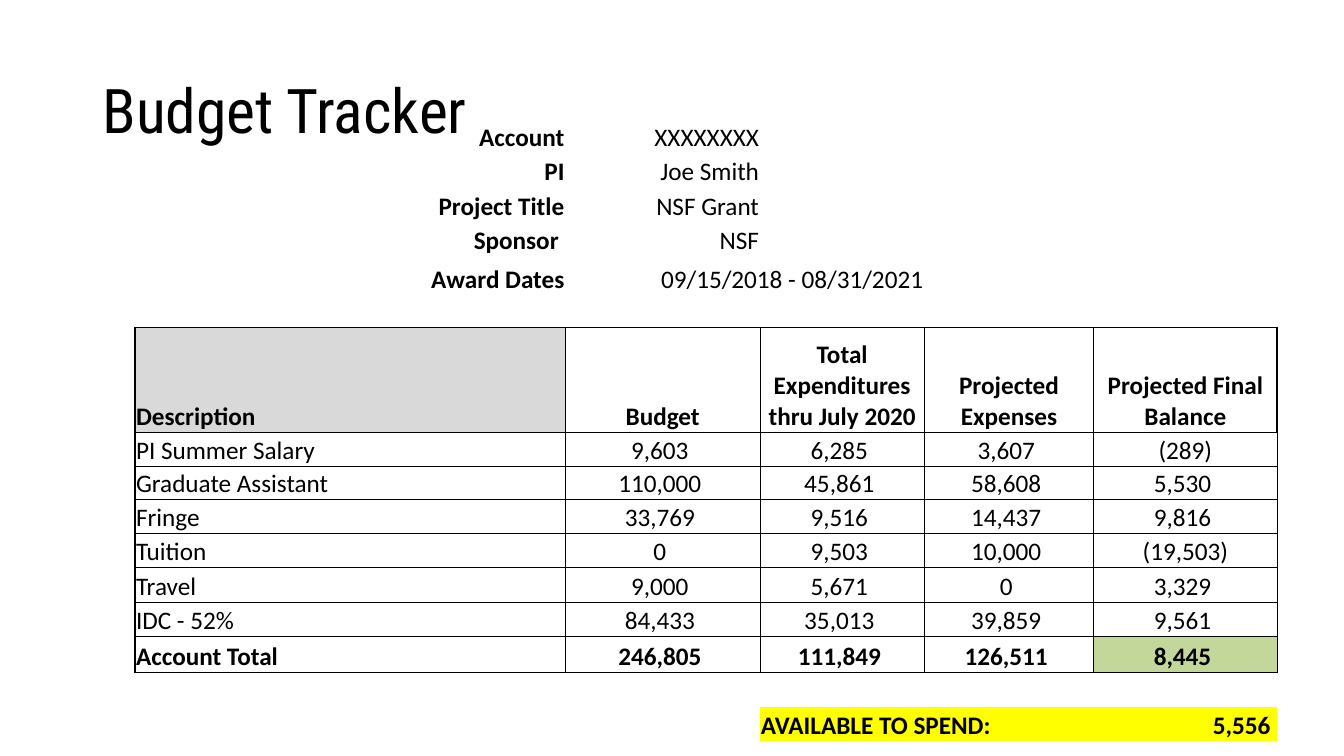
from dataclasses import dataclass

from pptx import Presentation, oxml
from pptx import util as u
from pptx.dml import color
from pptx.enum import text
from pptx.oxml import ns


@dataclass(frozen=True)
class Theme:
    ink: str = "000000"
    header: str = "D9D9D9"
    balance: str = "C4D79B"
    available: str = "FFFF00"
    title_font: str = "Roboto Condensed"
    body_font: str = "Calibri"
    title_size: float = 44
    body_size: float = 18
    thin: float = 0.5
    thick: float = 1


LEFT, CENTER, RIGHT = text.PP_ALIGN.LEFT, text.PP_ALIGN.CENTER, text.PP_ALIGN.RIGHT
NO_STYLE = "{2D5ABB26-0587-4C30-8999-92F81FD0307C}"

ACCOUNT_DETAILS = [
    ("Account", "XXXXXXXX"),
    ("PI", "Joe Smith"),
    ("Project Title", "NSF Grant"),
    ("Sponsor ", "NSF"),
    ("Award Dates", "09/15/2018 - 08/31/2021"),
]
BUDGET = [
    ("Description", "Budget", "Total Expenditures thru July 2020",
     "Projected Expenses", "Projected Final Balance"),
    ("PI Summer Salary", "9,603 ", "6,285 ", "3,607 ", "(289)"),
    ("Graduate Assistant", "110,000 ", "45,861 ", "58,608 ", "5,530 "),
    ("Fringe", "33,769 ", "9,516 ", "14,437 ", "9,816 "),
    ("Tuition", "0 ", "9,503 ", "10,000 ", "(19,503)"),
    ("Travel", "9,000 ", "5,671 ", "0 ", "3,329 "),
    ("IDC - 52%", "84,433 ", "35,013 ", "39,859 ", "9,561 "),
    ("Account Total", "246,805 ", "111,849 ", "126,511 ", "8,445 "),
]
COLUMN_WIDTHS = [307.4, 139, 117.4, 121, 131]
ROW_HEIGHTS = [24.5] * 4 + [28.1, 22, 75, 24.5, 23.3] + [24.5] * 4 + [26, 24.5, 24.5]
AWARD_ROW = 4
HEADER_ROW = 6
TOTAL_ROW = HEADER_ROW + len(BUDGET) - 1
AVAILABLE_ROW = TOTAL_ROW + 2


class SlideBuilder:
    def __init__(self, page, theme):
        self.page = page
        self.theme = theme

    def add_text(self, para, content, font, size, align, bold=False):
        para.alignment = align
        span = para.add_run()
        span.text = content
        span.font.name = font
        span.font.size = u.Pt(size)
        span.font.bold = bold
        span.font.color.rgb = color.RGBColor.from_string(self.theme.ink)

    def title(self, content, left, top, width, height):
        box = self.page.shapes.title
        box.left, box.top = u.Pt(left), u.Pt(top)
        box.width, box.height = u.Pt(width), u.Pt(height)
        box.text_frame.vertical_anchor = text.MSO_ANCHOR.MIDDLE
        para = box.text_frame.paragraphs[0]
        para.line_spacing = 0.9
        self.add_text(para, content, self.theme.title_font, self.theme.title_size, LEFT)

    def table(self, left, top, widths, heights):
        frame = self.page.shapes.add_table(
            len(heights), len(widths), u.Pt(left), u.Pt(top),
            u.Pt(sum(widths)), u.Pt(sum(heights)))
        frame.element.xpath(".//a:tableStyleId")[0].text = NO_STYLE
        table = frame.table
        table.first_row = table.horz_banding = False
        for column, width in zip(table.columns, widths):
            column.width = u.Pt(width)
        for row, height in zip(table.rows, heights):
            row.height = u.Pt(height)
        for cell in table.iter_cells():
            cell.margin_left = cell.margin_right = cell.margin_top = u.Pt(0.7)
            cell.margin_bottom = 0
            cell.vertical_anchor = text.MSO_ANCHOR.BOTTOM
            cell.fill.background()
        return frame

    def cell(self, cell, content, align, bold=False, fill=None):
        para = cell.text_frame.paragraphs[0]
        self.add_text(para, content, self.theme.body_font, self.theme.body_size, align, bold)
        if fill:
            cell.fill.solid()
            cell.fill.fore_color.rgb = color.RGBColor.from_string(fill)

    def borders(self, frame, row, column, widths):
        row_element = frame.element.xpath(".//a:tr")[row]
        properties = row_element.xpath("./a:tc")[column].xpath("./a:tcPr")[0]
        for index, (side, width) in enumerate(zip("LRTB", widths)):
            properties.insert(index, oxml.parse_xml(
                f'<a:ln{side} {ns.nsdecls("a")} w="{u.Pt(width)}"><a:solidFill>'
                f'<a:srgbClr val="{self.theme.ink}"/></a:solidFill></a:ln{side}>'))


def border_widths(row, column, theme):
    first = column == 0
    header = row == HEADER_ROW
    last_header = header and column == len(COLUMN_WIDTHS) - 1
    heavy = (
        column <= 1,
        first or last_header,
        header or (first and row == HEADER_ROW + 1),
        first and row in (HEADER_ROW, TOTAL_ROW),
    )
    return [theme.thick if edge else theme.thin for edge in heavy]


def main():
    deck = Presentation()
    deck.slide_width, deck.slide_height = u.Pt(960), u.Pt(540)
    page = deck.slides.add_slide(deck.slide_layouts.get_by_name("Title Only"))
    theme = Theme()
    builder = SlideBuilder(page, theme)
    builder.title("Budget Tracker", 66, 29, 828, 104.4)

    frame = builder.table(96.5, 85, COLUMN_WIDTHS, ROW_HEIGHTS)
    table = frame.table
    for row, start in ((AWARD_ROW, 1), (AVAILABLE_ROW, 2)):
        table.cell(row, start).merge(table.cell(row, start + 1))

    for row, (label, value) in enumerate(ACCOUNT_DETAILS):
        builder.cell(table.cell(row, 0), label, RIGHT, bold=True)
        builder.cell(table.cell(row, 1), value, RIGHT)

    fills = {(HEADER_ROW, 0): theme.header, (TOTAL_ROW, 4): theme.balance}
    for row, entries in enumerate(BUDGET, HEADER_ROW):
        for column, entry in enumerate(entries):
            builder.cell(table.cell(row, column), entry, CENTER if column else LEFT,
                         row in (HEADER_ROW, TOTAL_ROW), fills.get((row, column)))
            builder.borders(frame, row, column, border_widths(row, column, theme))

    builder.cell(table.cell(AVAILABLE_ROW, 2), "AVAILABLE TO SPEND:", LEFT, True, theme.available)
    builder.cell(table.cell(AVAILABLE_ROW, 4), "5,556 ", RIGHT, True, theme.available)
    deck.save("out.pptx")


if __name__ == "__main__":
    main()
